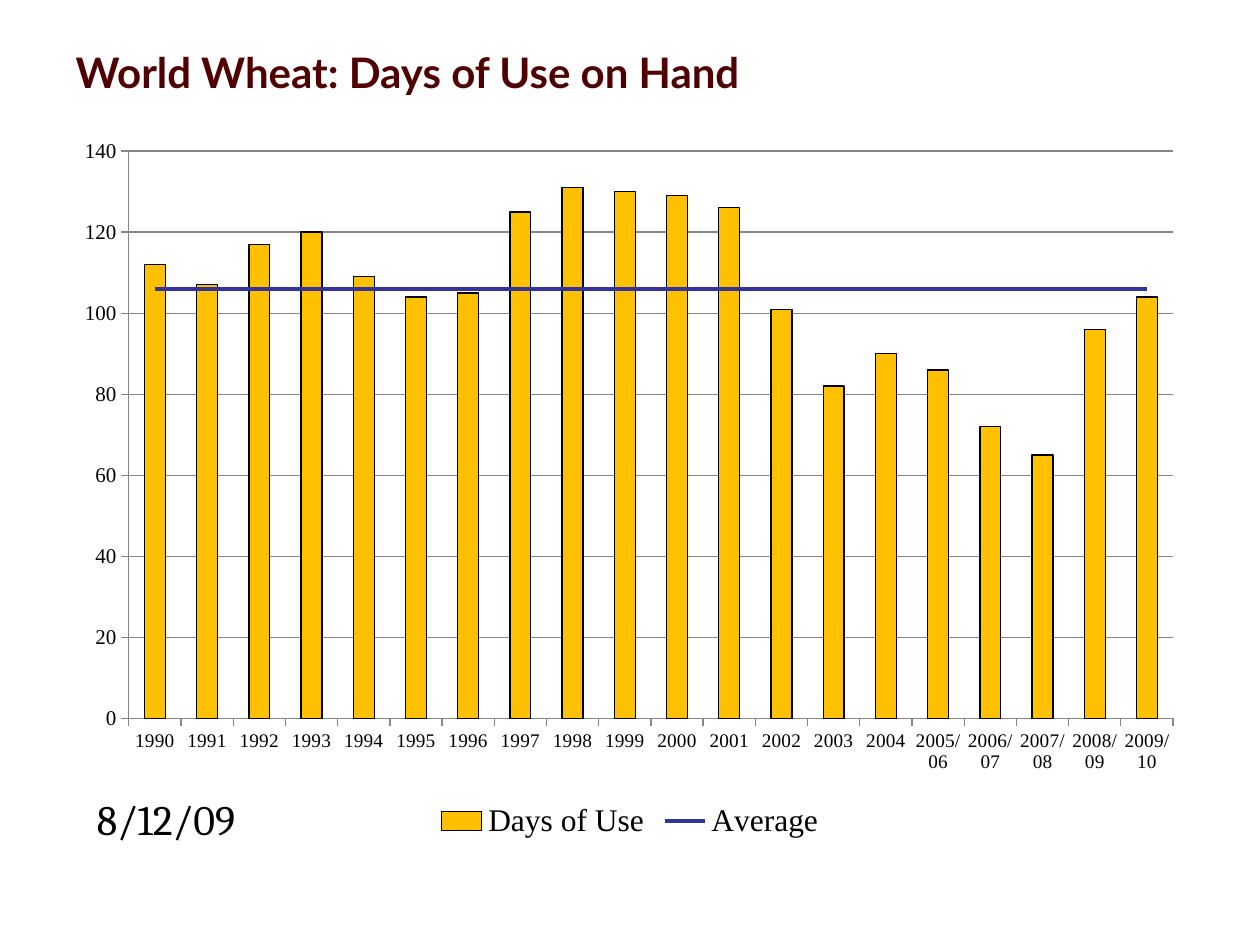
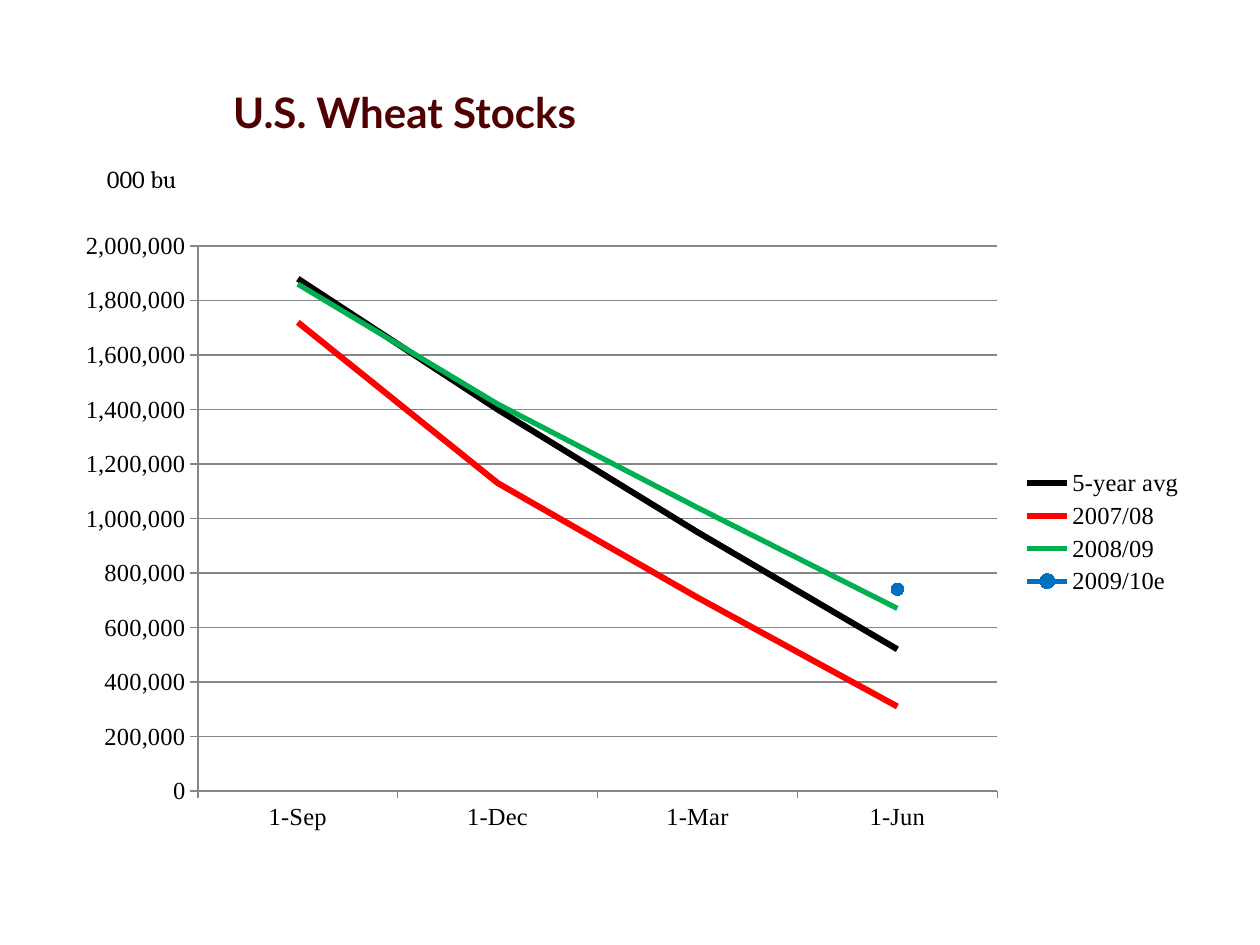
"""Build two slides of wheat stock charts."""
from copy import deepcopy
from dataclasses import dataclass
from typing import Optional

from pptx import Presentation
from pptx.chart.chart import Chart
from pptx.chart.data import CategoryChartData
from pptx.dml.color import RGBColor
from pptx.enum.chart import XL_CHART_TYPE, XL_LEGEND_POSITION, XL_MARKER_STYLE, XL_TICK_MARK
from pptx.enum.text import MSO_ANCHOR, MSO_AUTO_SIZE, PP_ALIGN
from pptx.oxml import parse_xml
from pptx.oxml.ns import nsdecls
from pptx.presentation import Presentation as Deck
from pptx.slide import Slide
from pptx.text.text import TextFrame
from pptx.util import Inches, Pt

COLUMN_STACKED = XL_CHART_TYPE.COLUMN_STACKED
LINE = XL_CHART_TYPE.LINE
LEGEND_BOTTOM = XL_LEGEND_POSITION.BOTTOM
LEGEND_RIGHT = XL_LEGEND_POSITION.RIGHT
NO_MARKER = XL_MARKER_STYLE.NONE
CIRCLE = XL_MARKER_STYLE.CIRCLE
TICK_OUTSIDE = XL_TICK_MARK.OUTSIDE
MIDDLE = MSO_ANCHOR.MIDDLE
TOP = MSO_ANCHOR.TOP
LEFT = PP_ALIGN.LEFT
GROW = MSO_AUTO_SIZE.SHAPE_TO_FIT_TEXT
FIXED = MSO_AUTO_SIZE.NONE

WIDTH, HEIGHT = Inches(10), Inches(7.5)
COLUMNS, ROWS = 40, 30
TITLE_ONLY = 5


@dataclass(frozen=True)
class Theme:
    """Hold the colours, fonts and type sizes of the slides."""
    title_color: str = "500000"
    text_color: str = "000000"
    grid_color: str = "868686"
    bar_color: str = "FFC000"
    average_color: str = "333399"
    red: str = "FF0000"
    green: str = "00B050"
    blue: str = "0070C0"
    title_font: str = "Lato"
    label_font: str = "Cambria"
    chart_font: str = "Times New Roman"
    title_size: int = 24
    chart_size: int = 18
    label_size: int = 14
    value_size: int = 12
    year_size: int = 11


@dataclass(frozen=True)
class Box:
    """Place an object in grid columns and rows."""
    column: float
    row: float
    columns: float
    rows: float

    def lengths(self) -> tuple[int, int, int, int]:
        """Return left, top, width and height."""
        return (int(WIDTH * self.column / COLUMNS), int(HEIGHT * self.row / ROWS),
                int(WIDTH * self.columns / COLUMNS), int(HEIGHT * self.rows / ROWS))


@dataclass(frozen=True)
class LineStyle:
    """Describe one line of a chart."""
    color: str
    width: float
    marker_size: Optional[int] = None


@dataclass(frozen=True)
class ChartPlan:
    """Describe a chart, its axes and its plot area as shares of the chart."""
    box: Box
    kind: XL_CHART_TYPE
    categories: list[str]
    series: dict[str, list[Optional[int]]]
    maximum: int
    step: int
    number_format: str
    category_size: int
    value_size: int
    legend: XL_LEGEND_POSITION
    legend_size: int
    plot_area: tuple[float, float, float, float]


THEME = Theme()
YEARS = [str(year) for year in range(1990, 2005)]
SEASONS = [f"{year}/{(year + 1) % 100:02d}" for year in range(2005, 2010)]
DAYS = [112, 107, 117, 120, 109, 104, 105, 125, 131, 130,
        129, 126, 101, 82, 90, 86, 72, 65, 96, 104]
AVERAGE_DAYS = 106

DAYS_CHART = ChartPlan(
    Box(2, 4, 36, 22.8), COLUMN_STACKED, YEARS + SEASONS,
    {"Days of Use": DAYS, "Average": [AVERAGE_DAYS] * len(DAYS)},
    140, 20, "0", THEME.year_size, THEME.value_size,
    LEGEND_BOTTOM, THEME.chart_size, (0.058, 0.035, 0.921, 0.79))
STOCKS_CHART = ChartPlan(
    Box(2, 7, 36, 19.8), LINE, ["1-Sep", "1-Dec", "1-Mar", "1-Jun"],
    {"5-year avg": [1880000, 1400000, 950000, 520000],
     "2007/08": [1720000, 1130000, 710000, 310000],
     "2008/09": [1860000, 1420000, 1040000, 670000],
     "2009/10e": [None, None, None, 740000]},
    2000000, 200000, "#,##0", THEME.label_size, THEME.label_size,
    LEGEND_RIGHT, THEME.label_size, (0.119, 0.041, 0.705, 0.874))
AVERAGE_STYLE = LineStyle(THEME.average_color, 2.5)
STOCK_STYLES = [LineStyle(THEME.text_color, 3.5), LineStyle(THEME.red, 3.5),
                LineStyle(THEME.green, 3), LineStyle(THEME.blue, 3, 7)]


def color(value: str) -> RGBColor:
    """Turn a hexadecimal string into a colour."""
    return RGBColor.from_string(value)


def write(frame: TextFrame, text: str, *, font: str, size: int, fill: str,
          bold: bool = False, anchor: MSO_ANCHOR = TOP,
          auto_size: MSO_AUTO_SIZE = GROW) -> None:
    """Put formatted text into a frame."""
    frame.word_wrap = True
    frame.auto_size = auto_size
    frame.vertical_anchor = anchor
    paragraph = frame.paragraphs[0]
    paragraph.alignment = LEFT
    run = paragraph.add_run()
    run.text = text
    run.font.name = font
    run.font.size = Pt(size)
    run.font.bold = bold
    run.font.color.rgb = color(fill)


def add_titled_slide(presentation: Deck, title: str, box: Box) -> Slide:
    """Add a slide with a placed title."""
    slide = presentation.slides.add_slide(presentation.slide_layouts[TITLE_ONLY])
    shape = slide.shapes.title
    shape.left, shape.top, shape.width, shape.height = box.lengths()
    write(shape.text_frame, title, font=THEME.title_font, size=THEME.title_size,
          fill=THEME.title_color, bold=True, anchor=MIDDLE, auto_size=FIXED)
    return slide


def add_label(slide: Slide, text: str, box: Box, size: int) -> None:
    """Add a plain label."""
    shape = slide.shapes.add_textbox(*box.lengths())
    write(shape.text_frame, text, font=THEME.label_font, size=size, fill=THEME.text_color)


def place_plot_area(chart: Chart, shares: tuple[float, float, float, float]) -> None:
    """Fix the inner plot area of a chart."""
    edges = "".join(f'<c:{name}Mode val="edge"/>' for name in "xy")
    lengths = "".join(f'<c:{name} val="{share}"/>' for name, share in zip("xywh", shares))
    plot_area = chart.element.xpath("c:chart/c:plotArea")[0]
    for layout in plot_area.xpath("c:layout"):
        plot_area.remove(layout)
    plot_area.insert(0, parse_xml(
        f'<c:layout {nsdecls("c")}><c:manualLayout><c:layoutTarget val="inner"/>'
        f'{edges}{lengths}</c:manualLayout></c:layout>'))


def add_chart(slide: Slide, plan: ChartPlan) -> Chart:
    """Add a chart with its axes and legend formatted."""
    data = CategoryChartData(number_format=plan.number_format)
    data.categories = plan.categories
    for name, values in plan.series.items():
        data.add_series(name, values)
    chart = slide.shapes.add_chart(plan.kind, *plan.box.lengths(), data).chart
    chart.has_title = False
    chart.font.name = THEME.chart_font
    chart.font.size = Pt(THEME.chart_size)
    chart.font.color.rgb = color(THEME.text_color)
    chart.plots[0].vary_by_categories = False
    chart.has_legend = True
    chart.legend.position = plan.legend
    chart.legend.include_in_layout = False
    chart.legend.font.size = Pt(plan.legend_size)
    value_axis = chart.value_axis
    value_axis.minimum_scale = 0
    value_axis.maximum_scale = plan.maximum
    value_axis.major_unit = plan.step
    value_axis.has_major_gridlines = True
    value_axis.tick_labels.number_format = plan.number_format
    value_axis.tick_labels.number_format_is_linked = False
    for axis, size in ((chart.category_axis, plan.category_size), (value_axis, plan.value_size)):
        axis.major_tick_mark = TICK_OUTSIDE
        axis.tick_labels.font.size = Pt(size)
    for ruled in (chart.category_axis, value_axis, value_axis.major_gridlines):
        ruled.format.line.color.rgb = color(THEME.grid_color)
        ruled.format.line.width = Pt(0.75)
    place_plot_area(chart, plan.plot_area)
    return chart


def turn_last_bars_into_line(chart: Chart) -> None:
    """Move the last bar series into a line plot on the same axes."""
    bars = chart.element.xpath("c:chart/c:plotArea/c:barChart")[0]
    series = bars.xpath("c:ser")[-1]
    for invert in series.xpath("c:invertIfNegative"):
        series.remove(invert)
    lines = parse_xml(f'<c:lineChart {nsdecls("c")}><c:grouping val="standard"/>'
                      '<c:varyColors val="0"/><c:marker val="1"/></c:lineChart>')
    lines.insert(2, series)
    for axis in bars.xpath("c:axId"):
        lines.append(deepcopy(axis))
    bars.addnext(lines)


def style_lines(chart: Chart, plot_index: int, styles: list[LineStyle]) -> None:
    """Format the lines of one plot."""
    for series, style in zip(chart.plots[plot_index].series, styles):
        series.smooth = False
        series.format.line.color.rgb = color(style.color)
        series.format.line.width = Pt(style.width)
        series.marker.style = CIRCLE if style.marker_size else NO_MARKER
        if style.marker_size:
            series.marker.size = style.marker_size
            series.marker.format.fill.solid()
            series.marker.format.fill.fore_color.rgb = color(style.color)
            series.marker.format.line.color.rgb = color(style.color)


def build_days_slide(presentation: Deck) -> None:
    """Build the slide on days of use."""
    slide = add_titled_slide(presentation, "World Wheat: Days of Use on Hand",
                             Box(2, 1.2, 36, 2.12))
    chart = add_chart(slide, DAYS_CHART)
    turn_last_bars_into_line(chart)
    bar_plot = chart.plots[0]
    bar_plot.gap_width = 150
    bar_plot.overlap = 100
    bars = bar_plot.series[0]
    bars.format.fill.solid()
    bars.format.fill.fore_color.rgb = color(THEME.bar_color)
    bars.format.line.color.rgb = color(THEME.text_color)
    bars.format.line.width = Pt(0.75)
    style_lines(chart, 1, [AVERAGE_STYLE])
    add_label(slide, "8/12/09", Box(2.68, 25, 8, 2), THEME.title_size)


def build_stocks_slide(presentation: Deck) -> None:
    """Build the slide on stocks by quarter."""
    slide = add_titled_slide(presentation, "U.S. Wheat Stocks", Box(7, 1.04, 30, 5))
    style_lines(add_chart(slide, STOCKS_CHART), 0, STOCK_STYLES)
    add_label(slide, "000 bu", Box(3, 5, 5.32, 1.36), THEME.label_size)


def main() -> None:
    """Build and save the slides."""
    presentation = Presentation()
    presentation.slide_width, presentation.slide_height = WIDTH, HEIGHT
    build_days_slide(presentation)
    build_stocks_slide(presentation)
    presentation.save("out.pptx")


if __name__ == "__main__":
    main()
